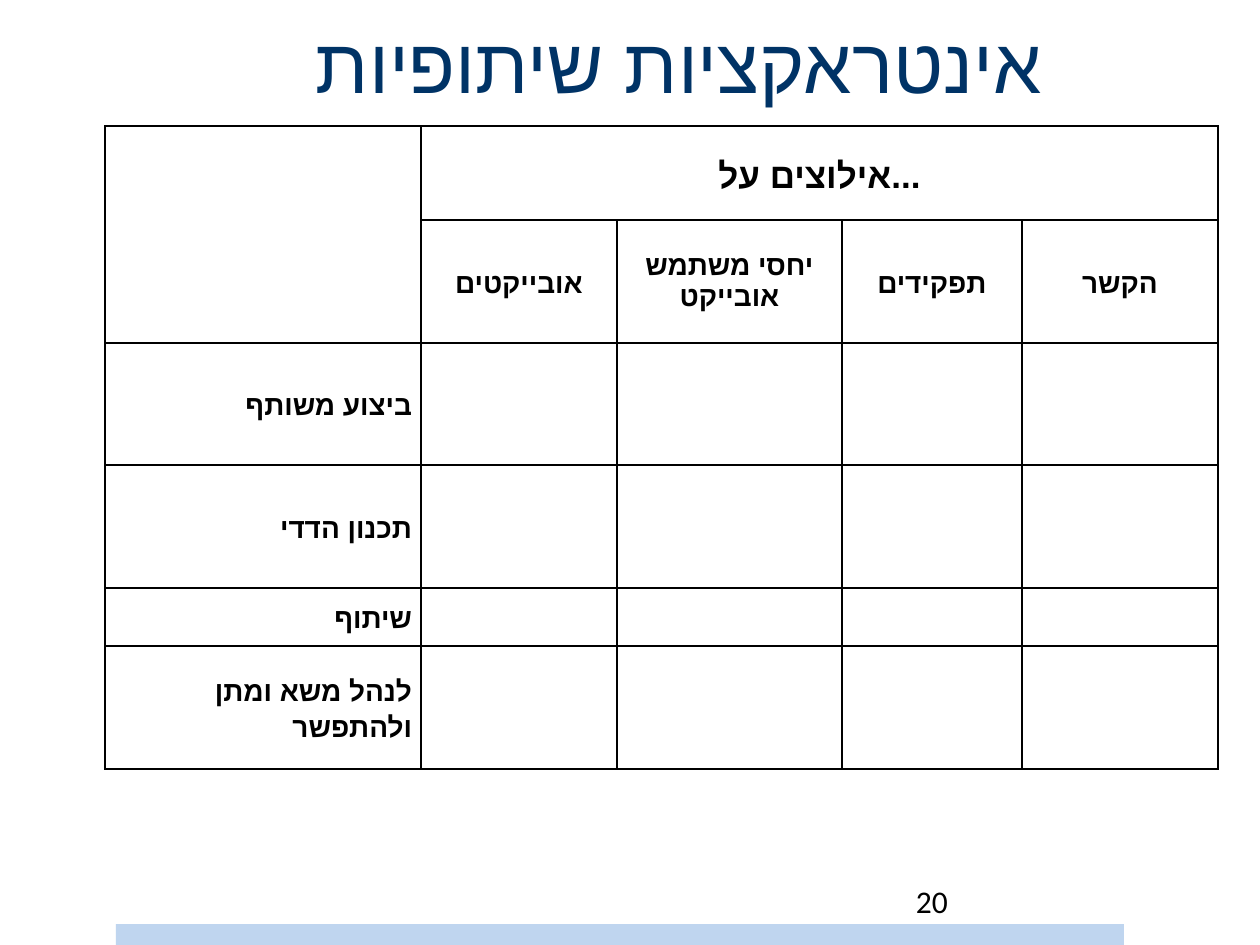
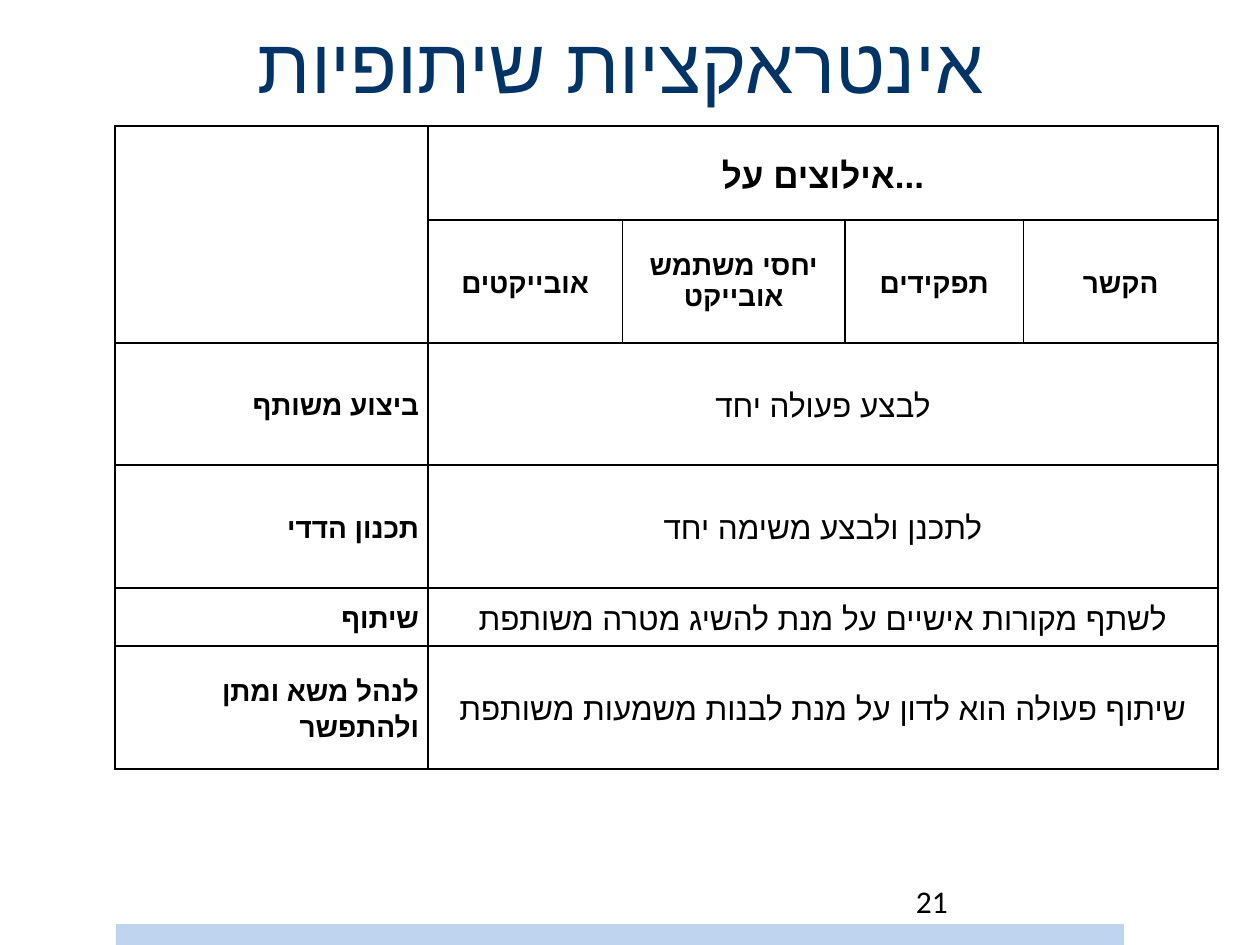
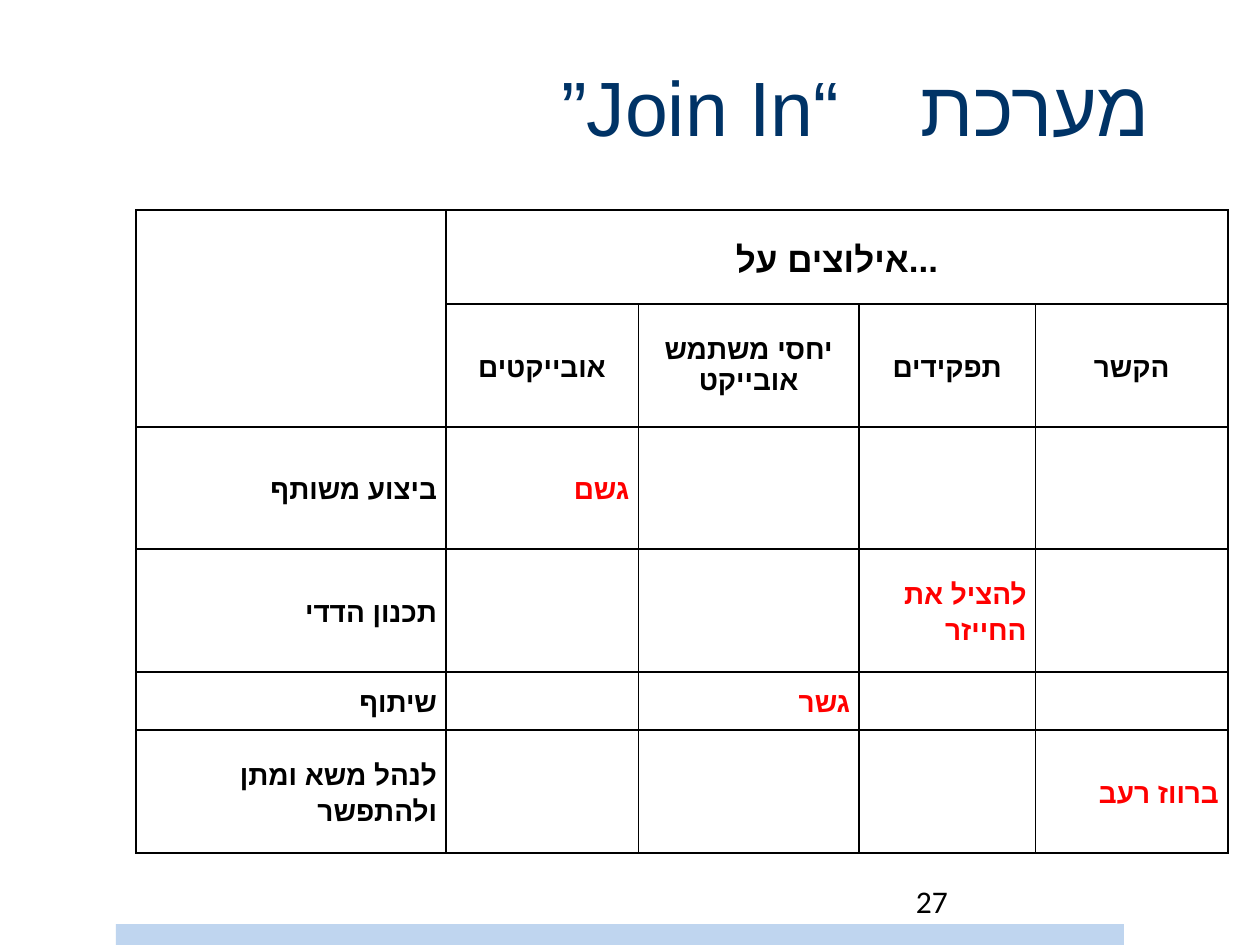
from dataclasses import dataclass, field

from lxml import etree
from pptx import Presentation
from pptx import util as u
from pptx.dml import color
from pptx.enum import shapes, text
from pptx.oxml import ns

EMU_PER_PX = 914400 / 126
NAVY, BAND, BLACK, RED, WHITE = "003366", "BFD5EF", "000000", "FF0000", "FFFFFF"
LEFT, CENTER, RIGHT = text.PP_ALIGN.LEFT, text.PP_ALIGN.CENTER, text.PP_ALIGN.RIGHT
COLUMNS = (316, 196, 225, 180, 196)
ROWS = (94, 123, 122, 123, 58, 123)
HEADING = "אילוצים על..."
CONSTRAINTS = ("אובייקטים", "יחסי משתמש אובייקט", "תפקידים", "הקשר")
INTERACTIONS = ("ביצוע משותף", "תכנון הדדי", "שיתוף", "לנהל משא ומתן ולהתפשר")


@dataclass(frozen=True)
class Title:
    """A slide title; gap widens the space after the first word, in points."""
    words: str
    x: int
    y: int
    align: text.PP_ALIGN = CENTER
    right_inset: int = 0
    gap: int = 0


@dataclass(frozen=True)
class Matrix:
    """An interaction table with merged row texts or single examples."""
    x: int
    y: int
    width: int
    rtl: bool = False
    meanings: tuple[str, ...] = ()
    examples: dict[tuple[int, int], str] = field(default_factory=dict)


@dataclass(frozen=True)
class Page:
    """One slide: number, title and table."""
    number: int
    title: Title
    matrix: Matrix


PAGES = (
    Page(20, Title("אינטראקציות שיתופיות", 305, 10, right_inset=60), Matrix(105, 126, 1113)),
    Page(21, Title("אינטראקציות שיתופיות", 231, 10, RIGHT, right_inset=55),
         Matrix(115, 126, 1103, meanings=(
             "לבצע פעולה יחד",
             "לתכנן ולבצע משימה יחד",
             "לשתף מקורות אישיים על מנת להשיג מטרה משותפת",
             "שיתוף פעולה הוא לדון על מנת לבנות משמעות משותפת"))),
    Page(27, Title("מערכת “Join In”", 451, 53, gap=34),
         Matrix(136, 210, 1092, rtl=True, examples={
             (2, 1): "גשם", (3, 3): "להציל את החייזר",
             (4, 2): "גשר", (5, 4): "ברווז רעב"})),
)


def px(n: float) -> u.Emu:
    """Turn pixels into EMU."""
    return u.Emu(round(n * EMU_PER_PX))


def rgb(value: str) -> color.RGBColor:
    """Turn a hex string into a colour."""
    return color.RGBColor.from_string(value)


def write(tf, words: str, *, size: int, font: str = "Arial", ink: str = BLACK,
          bold: bool = False, align=LEFT, rtl: bool = False,
          spacing: float = 1.0, gap: int = 0) -> None:
    """Write one formatted paragraph, optionally widening its first space."""
    p = tf.paragraphs[0]
    p.alignment, p.line_spacing = align, spacing
    if rtl:
        p._p.get_or_add_pPr().set("rtl", "1")
    first, space, rest = words.partition(" ")
    for part in (first, space, rest) if gap else (words,):
        r = p.add_run()
        r.text = part
        r.font.size, r.font.bold, r.font.name = u.Pt(size), bold, font
        r.font.color.rgb = rgb(ink)
        props = r._r.get_or_add_rPr()
        etree.SubElement(props, ns.qn("a:cs"), typeface=font)
        if gap and part == space:
            props.set("spc", str(gap * 100))


def add_text(s, x: int, y: int, w: int, h: int, words: str,
             left_inset: int = 13, right_inset: int = 13, **style) -> None:
    """Add a text box."""
    tf = s.shapes.add_textbox(px(x), px(y), px(w), px(h)).text_frame
    tf.word_wrap = True
    tf.margin_left, tf.margin_right = px(left_inset), px(right_inset)
    write(tf, words, **style)


def frame_cell(cell) -> None:
    """Give a cell its margins, thin black borders and no fill."""
    cell.margin_left = cell.margin_right = px(9)
    cell.margin_top = cell.margin_bottom = 0
    cell.vertical_anchor = text.MSO_ANCHOR.MIDDLE
    props = cell._tc.get_or_add_tcPr()
    for side in ("a:lnL", "a:lnR", "a:lnT", "a:lnB"):
        ln = etree.SubElement(props, ns.qn(side), w=str(u.Pt(1)))
        fill = etree.SubElement(ln, ns.qn("a:solidFill"))
        etree.SubElement(fill, ns.qn("a:srgbClr"), val=BLACK)
    cell.fill.background()


def add_matrix(s, m: Matrix) -> None:
    """Add the table of interactions against constraints."""
    frame = s.shapes.add_table(len(ROWS), len(COLUMNS), px(m.x), px(m.y),
                               px(m.width), px(sum(ROWS)))
    table = frame.table
    table.first_row = table.horz_banding = False
    for column, width in zip(table.columns, COLUMNS):
        column.width = px(width * m.width / sum(COLUMNS))
    for row, height in zip(table.rows, ROWS):
        row.height = px(height)
    for cell in table.iter_cells():
        frame_cell(cell)

    def put(row: int, col: int, words: str, **style) -> None:
        """Write into one cell."""
        style = {"size": 16, "bold": True, "spacing": 1.15} | style
        write(table.cell(row, col).text_frame, words, **style)

    table.cell(0, 0).merge(table.cell(1, 0))
    table.cell(0, 1).merge(table.cell(0, 4))
    put(0, 1, HEADING, size=20, align=CENTER)
    for col, words in enumerate(CONSTRAINTS, 1):
        put(1, col, words, align=CENTER, spacing=1.0 if col == 2 else 1.15)
    for row, words in enumerate(INTERACTIONS, 2):
        put(row, 0, words, align=RIGHT, rtl=m.rtl)
    for row, words in enumerate(m.meanings, 2):
        table.cell(row, 1).merge(table.cell(row, 4))
        put(row, 1, words, size=18, bold=False, align=CENTER)
    for (row, col), words in m.examples.items():
        put(row, col, words, ink=RED, align=RIGHT, rtl=m.rtl)


def add_page(prs, page: Page) -> None:
    """Add one slide with its band, number, title and table."""
    s = prs.slides.add_slide(prs.slide_layouts[6])
    s.background.fill.solid()
    s.background.fill.fore_color.rgb = rgb(WHITE)
    sp = s.shapes.add_shape(shapes.MSO_SHAPE.RECTANGLE, px(116), px(924), px(1008), px(21))
    sp.shadow.inherit = False
    sp.fill.solid()
    sp.fill.fore_color.rgb = rgb(BAND)
    sp.line.fill.background()
    add_text(s, 903, 876, 294, 50, str(page.number), size=18, font="Calibri")
    t = page.title
    add_text(s, t.x, t.y, 809, 95, t.words, 0, t.right_inset, size=44, ink=NAVY,
             align=t.align, rtl=True, gap=t.gap)
    add_matrix(s, page.matrix)


def main() -> None:
    """Build and save the slides."""
    prs = Presentation()
    prs.slide_width, prs.slide_height = px(1260), px(945)
    for page in PAGES:
        add_page(prs, page)
    prs.save("out.pptx")


if __name__ == "__main__":
    main()
